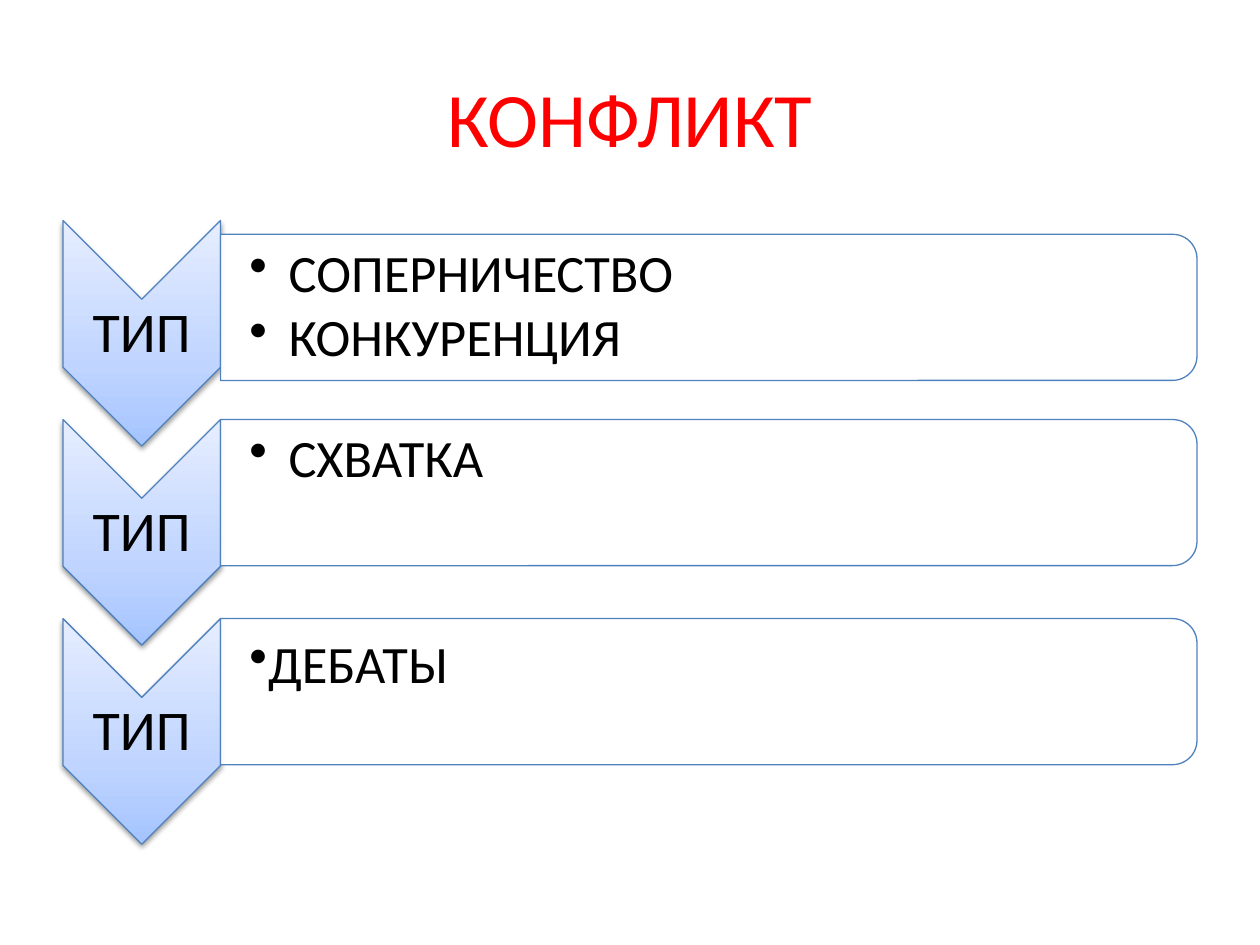
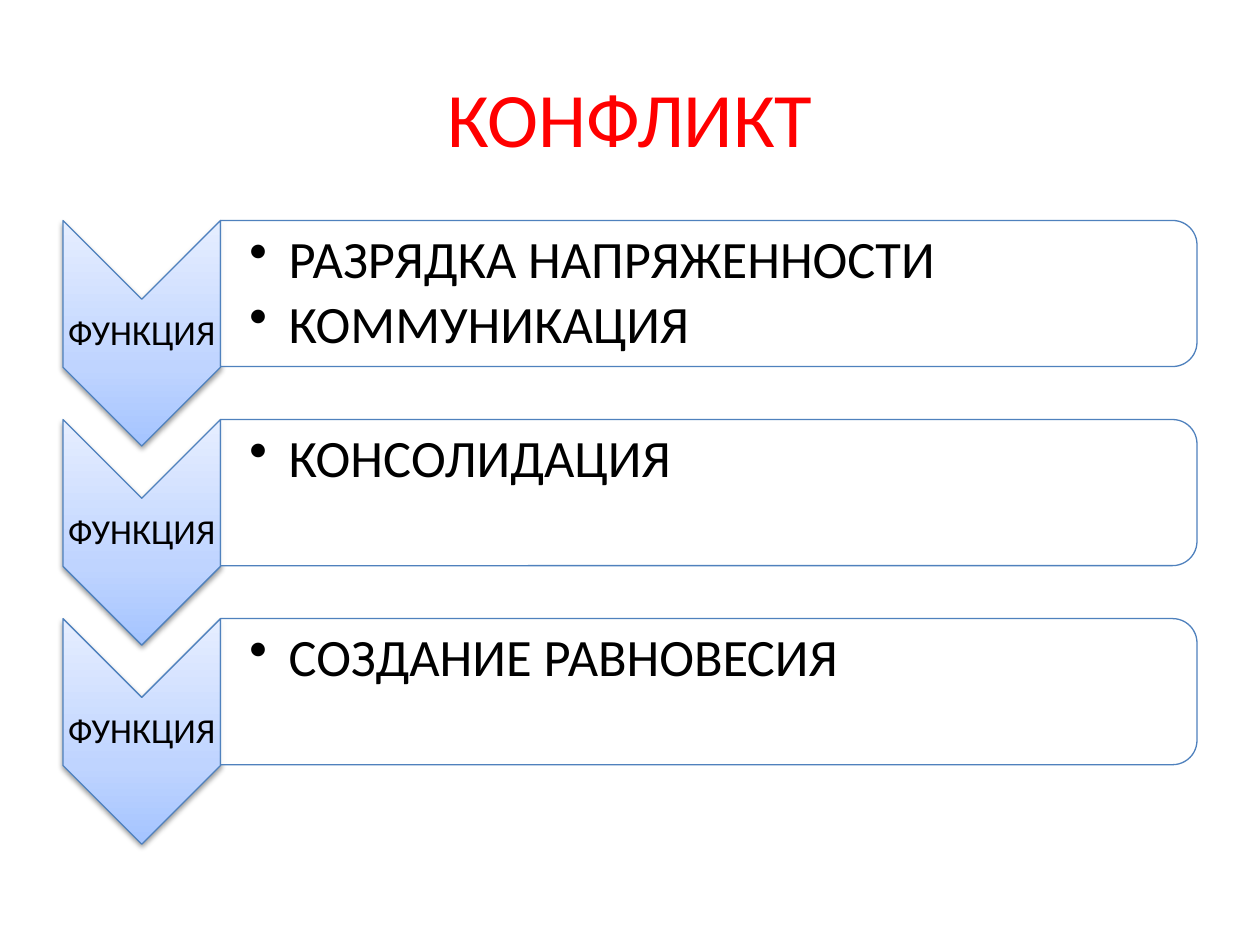
from dataclasses import dataclass

from lxml import etree
from pptx import Presentation
from pptx import util as u
from pptx.dml.color import RGBColor
from pptx.enum import shapes, text
from pptx.oxml.ns import qn


@dataclass(frozen=True)
class Theme:
    font: str = "Calibri"
    red: str = "FF0000"
    ink: str = "000000"
    edge: str = "4F81BD"
    panel: str = "FFFFFF"
    fade: tuple = ((0, "A4C4FF"), (35, "BFD4FF"), (100, "E6EEFF"))
    title: float = 44
    item: float = 30
    line: float = 0.75


@dataclass(frozen=True)
class Row:
    items: tuple[str, ...]
    shift: float = 0  # panel offset below the arrow's top
    hang: float = 0.31
    space: float = 0.9


@dataclass(frozen=True)
class Page:
    label: str
    size: float
    pad: float
    rows: tuple[Row, ...]


THEME = Theme()
LEFT, TOP, STEP = 0.5, 1.75, 1.58
ARROW_W, ARROW_H = 1.25, 1.79
PANEL_W, PANEL_H = 7.75, 1.16

PAGES = (
    Page("ТИП", 32, 0.02, (
        Row(("СОПЕРНИЧЕСТВО", "КОНКУРЕНЦИЯ"), shift=0.11),
        Row(("СХВАТКА",)),
        Row(("ДЕБАТЫ",), hang=0, space=1),
    )),
    Page("ФУНКЦИЯ", 20, 0.01, (
        Row(("РАЗРЯДКА НАПРЯЖЕННОСТИ", "КОММУНИКАЦИЯ")),
        Row(("КОНСОЛИДАЦИЯ",)),
        Row(("СОЗДАНИЕ РАВНОВЕСИЯ",)),
    )),
)


def add(parent, tag: str, **attrs):
    return etree.SubElement(parent, qn(tag), {k: str(v) for k, v in attrs.items()})


def write(frame, lines, *, size, color=THEME.ink, align=text.PP_ALIGN.LEFT,
          anchor=text.MSO_ANCHOR.MIDDLE, pads=None, space=None, after=0, hang=None):
    """Fill a text frame; a hang value turns the lines into bullets."""
    frame.word_wrap = True
    frame.vertical_anchor = anchor
    if pads:
        (frame.margin_left, frame.margin_top,
         frame.margin_right, frame.margin_bottom) = map(u.Inches, pads)
    for i, line in enumerate(lines):
        para = frame.add_paragraph() if i else frame.paragraphs[0]
        para.alignment = align
        para.space_after = u.Pt(after)
        if space:
            para.line_spacing = space
        run = para.add_run()
        run.text = line
        run.font.name = THEME.font
        run.font.size = u.Pt(size)
        run.font.color.rgb = RGBColor.from_string(color)
        if hang is not None:
            para.level = 1
            props = para._p.get_or_add_pPr()
            props.set("marL", str(u.Inches(hang)))
            props.set("indent", str(-u.Inches(hang)))
            add(props, "a:buChar", char="•")


def place(slide, kind, left: float, top: float, wide: float, high: float):
    """Add a shape turned by 90 degrees that covers the given upright box."""
    x = left + (wide - high) / 2
    y = top + (high - wide) / 2
    shape = slide.shapes.add_shape(kind, *map(u.Inches, (x, y, high, wide)))
    shape.rotation = 90
    shape.shadow.inherit = False
    shape.line.color.rgb = RGBColor.from_string(THEME.edge)
    shape.line.width = u.Pt(THEME.line)
    return shape


def draw_arrow(slide, top: float) -> None:
    arrow = place(slide, shapes.MSO_SHAPE.CHEVRON, LEFT, top, ARROW_W, ARROW_H)
    arrow.fill.gradient()
    arrow.fill.gradient_angle = 90
    props = arrow._element.spPr
    props.find(qn("a:gradFill")).set("rotWithShape", "0")
    stops = props.find(".//" + qn("a:gsLst"))
    for stop in list(stops):
        stops.remove(stop)
    for pos, color in THEME.fade:
        add(add(stops, "a:gs", pos=pos * 1000), "a:srgbClr", val=color)
    shade = add(props.find(qn("a:effectLst")), "a:outerShdw", blurRad=u.Pt(3.1),
                dist=u.Pt(1.6), dir=90 * 60000, rotWithShape=0)
    add(add(shade, "a:srgbClr", val=THEME.ink), "a:alpha", val=38000)


def draw_panel(slide, top: float) -> None:
    panel = place(slide, shapes.MSO_SHAPE.ROUND_2_SAME_RECTANGLE,
                  LEFT + ARROW_W, top, PANEL_W, PANEL_H)
    panel.fill.solid()
    panel.fill.fore_color.rgb = RGBColor.from_string(THEME.panel)
    color = panel._element.spPr.find(qn("a:solidFill")).find(qn("a:srgbClr"))
    add(color, "a:alpha", val=90000)


def add_box(slide, *box: float):
    return slide.shapes.add_textbox(*map(u.Inches, box)).text_frame


def draw_row(slide, page: Page, row: Row, top: float) -> None:
    draw_arrow(slide, top)
    write(add_box(slide, LEFT, top + 0.63, ARROW_W, 0.54), [page.label],
          size=page.size, align=text.PP_ALIGN.CENTER, pads=[page.pad] * 4, space=0.9)
    top += row.shift
    draw_panel(slide, top)
    write(add_box(slide, LEFT + ARROW_W, top + 0.06, 7.69, 1.05), row.items,
          size=THEME.item, anchor=text.MSO_ANCHOR.TOP, pads=(0.23, 0.04, 0.02, 0.02),
          space=row.space, after=4.5, hang=row.hang)


def draw_page(deck, page: Page) -> None:
    slide = deck.slides.add_slide(deck.slide_layouts[5])
    title = slide.shapes.title
    title.left, title.top, title.width, title.height = map(u.Inches, (0.5, 0.3, 9, 1.25))
    write(title.text_frame, ["КОНФЛИКТ"], size=THEME.title, color=THEME.red,
          align=text.PP_ALIGN.CENTER)
    for i, row in enumerate(page.rows):
        draw_row(slide, page, row, TOP + i * STEP)


def main() -> None:
    deck = Presentation()
    deck.slide_width, deck.slide_height = u.Inches(10), u.Inches(7.5)
    for page in PAGES:
        draw_page(deck, page)
    deck.save("out.pptx")


if __name__ == "__main__":
    main()
